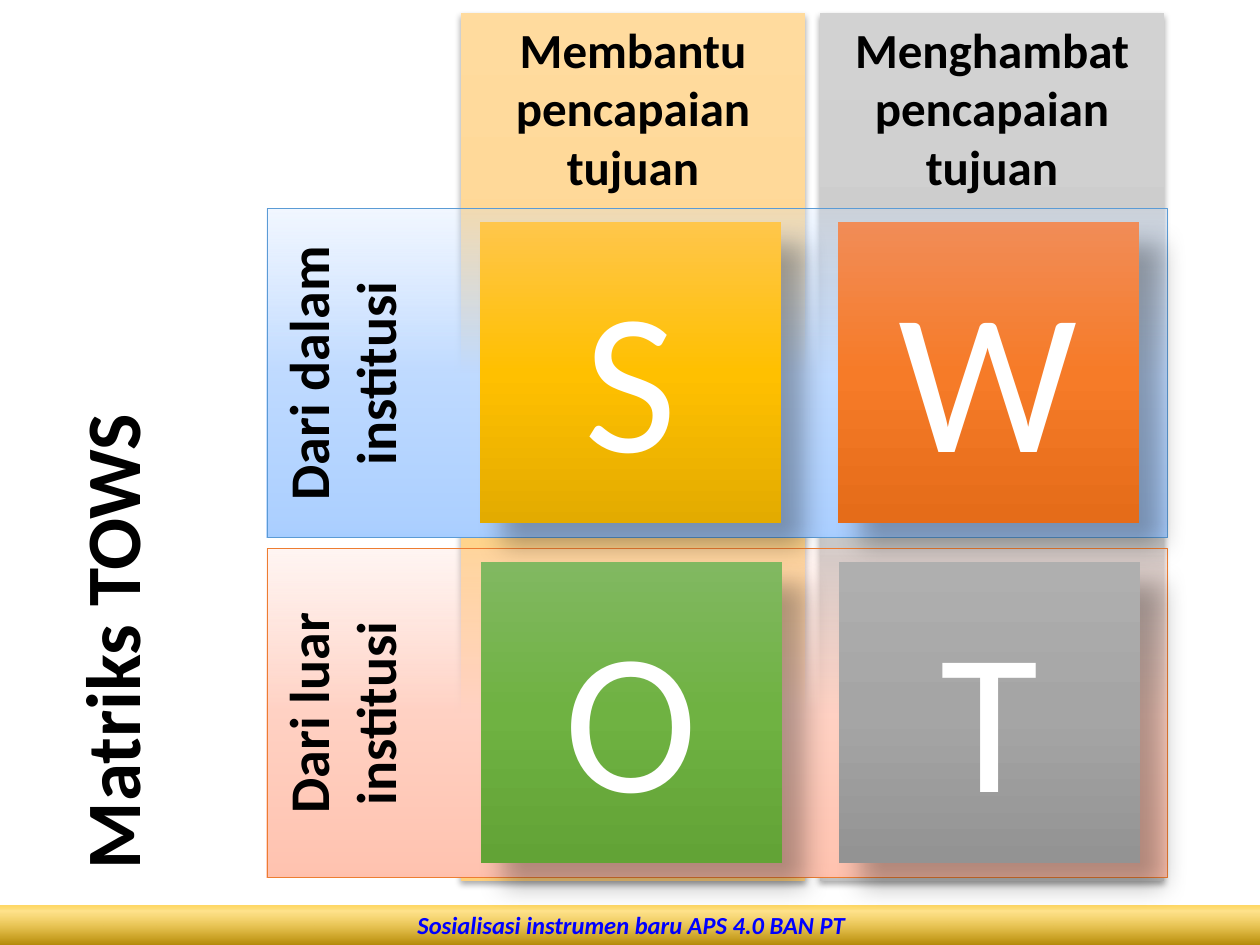
"""Build the TOWS matrix slide: two columns, two rows and four lettered squares."""
from dataclasses import dataclass
from typing import Optional

from pptx import Presentation
from pptx import util as u
from pptx.dml.color import RGBColor
from pptx.enum import shapes, text
from pptx.oxml import parse_xml
from pptx.oxml.ns import nsdecls, qn

COLORS = {
    "black": "000000", "white": "FFFFFF", "link": "0000FF",
    "blue_line": "5B9BD5", "orange_line": "ED7D31",
}
GRADIENTS = {
    "gold_bar": [(0, "AB8100", 100), (83, "FFC208", 46), (100, "FFD966", 100)],
    "gray_column": [(0, "D2D2D2", 100), (50, "C8C8C8", 100), (100, "C0C0C0", 100)],
    "amber_column": [(0, "FFDB9E", 100), (50, "FFD590", 100), (100, "FFD07C", 100)],
    "red_row": [(0, "FFD9CE", 25), (50, "FFD1C3", 100), (97, "FFC3B0", 100), (100, "FFBFAB", 100)],
    "blue_row": [(0, "CAE0FF", 25), (50, "BFDAFF", 100), (97, "ABCFFF", 100), (100, "A5CCFF", 100)],
    "gold": [(0, "FFC64B", 100), (50, "FFC000", 100), (100, "E3AB00", 100)],
    "orange": [(0, "F18C57", 100), (50, "F67B28", 100), (100, "E56C19", 100)],
    "green": [(0, "81B861", 100), (50, "6FB242", 100), (100, "62A336", 100)],
    "gray": [(0, "AFAFAF", 100), (50, "A5A5A5", 100), (100, "939393", 100)],
}
PX_PER_INCH = 126
TOP, MIDDLE = text.MSO_ANCHOR.TOP, text.MSO_ANCHOR.MIDDLE


@dataclass(frozen=True)
class Shadow:
    alpha: int
    blur: float
    dist: float
    angle: int


@dataclass(frozen=True)
class Panel:
    label: str
    x: int
    y: int
    w: int
    h: int
    gradient: str
    size: int
    color: str = "black"
    bold: bool = True
    italic: bool = False
    angle: int = 90
    line: Optional[str] = None
    line_width: float = 0.5
    shadow: Optional[Shadow] = None
    anchor: text.MSO_ANCHOR = TOP
    vertical: bool = False


COLUMN_SHADOW = Shadow(32, 3.5, 2.2, 90)
SQUARE_SHADOW = Shadow(30, 15, 18, 45)


def px(n: int) -> int:
    """Turn pixels into EMU."""
    return round(n * u.Inches(1) / PX_PER_INCH)


def rgb(name: str) -> RGBColor:
    """Look up a named colour."""
    return RGBColor.from_string(COLORS[name])


def set_gradient(sp, name: str, angle: int) -> None:
    """Give a shape a linear gradient fill."""
    stops = "".join(
        f'<a:gs pos="{pos * 1000}"><a:srgbClr val="{color}">'
        f'<a:alpha val="{alpha * 1000}"/></a:srgbClr></a:gs>'
        for pos, color, alpha in GRADIENTS[name]
    )
    sp._element.spPr.insert(2, parse_xml(
        f'<a:gradFill {nsdecls("a")} rotWithShape="1"><a:gsLst>{stops}</a:gsLst>'
        f'<a:lin ang="{angle * 60000}" scaled="0"/></a:gradFill>'
    ))


def set_shadow(sp, shadow: Shadow) -> None:
    """Add an outer shadow to a shape."""
    sp._element.spPr.find(qn("a:effectLst")).append(parse_xml(
        f'<a:outerShdw {nsdecls("a")} blurRad="{u.Pt(shadow.blur)}" dist="{u.Pt(shadow.dist)}" '
        f'dir="{shadow.angle * 60000}" rotWithShape="0"><a:srgbClr val="{COLORS["black"]}">'
        f'<a:alpha val="{shadow.alpha * 1000}"/></a:srgbClr></a:outerShdw>'
    ))


def set_font(p, size: int, color: str, bold: bool, italic: bool = False) -> None:
    """Set the font of a paragraph."""
    p.font.name, p.font.size = "Calibri", u.Pt(size)
    p.font.bold, p.font.italic = bold, italic
    p.font.color.rgb = rgb(color)


def draw_panel(s, panel: Panel) -> None:
    """Draw a labelled gradient rectangle."""
    sp = s.shapes.add_shape(
        shapes.MSO_SHAPE.RECTANGLE, px(panel.x), px(panel.y), px(panel.w), px(panel.h))
    sp.shadow.inherit = False
    set_gradient(sp, panel.gradient, panel.angle)
    if panel.line:
        sp.line.color.rgb = rgb(panel.line)
        sp.line.width = u.Pt(panel.line_width)
    else:
        sp.line.fill.background()
    if panel.shadow:
        set_shadow(sp, panel.shadow)
    tf = sp.text_frame
    tf.word_wrap, tf.vertical_anchor = True, panel.anchor
    if panel.vertical:
        tf._txBody.bodyPr.set("vert", "vert270")
    p = tf.paragraphs[0]
    p.text, p.alignment = panel.label, text.PP_ALIGN.CENTER
    set_font(p, panel.size, panel.color, panel.bold, panel.italic)


def draw_title(s, label: str) -> None:
    """Draw the title turned to read upwards."""
    sp = s.shapes.add_textbox(px(-204), px(507), px(639), px(110))
    sp.rotation = 270
    tf = sp.text_frame
    tf.word_wrap, tf.vertical_anchor = True, MIDDLE
    p = tf.paragraphs[0]
    p.text, p.line_spacing = label, 0.9
    set_font(p, 44, "black", True)


def main() -> None:
    """Build and save the slide."""
    prs = Presentation()
    prs.slide_width, prs.slide_height = u.Inches(10), u.Inches(7.5)
    s = prs.slides.add_slide(prs.slide_layouts[6])

    draw_panel(s, Panel("Sosialisasi instrumen baru APS 4.0 BAN PT", -1, 904, 1265, 43,
                        "gold_bar", 14, "link", italic=True, angle=270,
                        line="white", line_width=0.75))
    for label, x, gradient in (
        ("Menghambat pencapaian tujuan", 820, "gray_column"),
        ("Membantu pencapaian tujuan", 461, "amber_column"),
    ):
        draw_panel(s, Panel(label, x, 13, 344, 868, gradient, 28, shadow=COLUMN_SHADOW))
    for label, y, gradient, line in (
        ("Dari luar institusi", 549, "red_row", "orange_line"),
        ("Dari dalam institusi", 209, "blue_row", "blue_line"),
    ):
        draw_panel(s, Panel(label, 267, y, 901, 329, gradient, 32, line=line, vertical=True))
    draw_title(s, "Matriks TOWS")
    for i, (letter, gradient) in enumerate(zip("SWOT", ("gold", "orange", "green", "gray"))):
        row, col = divmod(i, 2)
        draw_panel(s, Panel(letter, 480 + 358 * col + row, 222 + 340 * row, 301, 301,
                            gradient, 115, "white", bold=False,
                            shadow=SQUARE_SHADOW, anchor=MIDDLE))
    prs.save("out.pptx")


if __name__ == "__main__":
    main()
